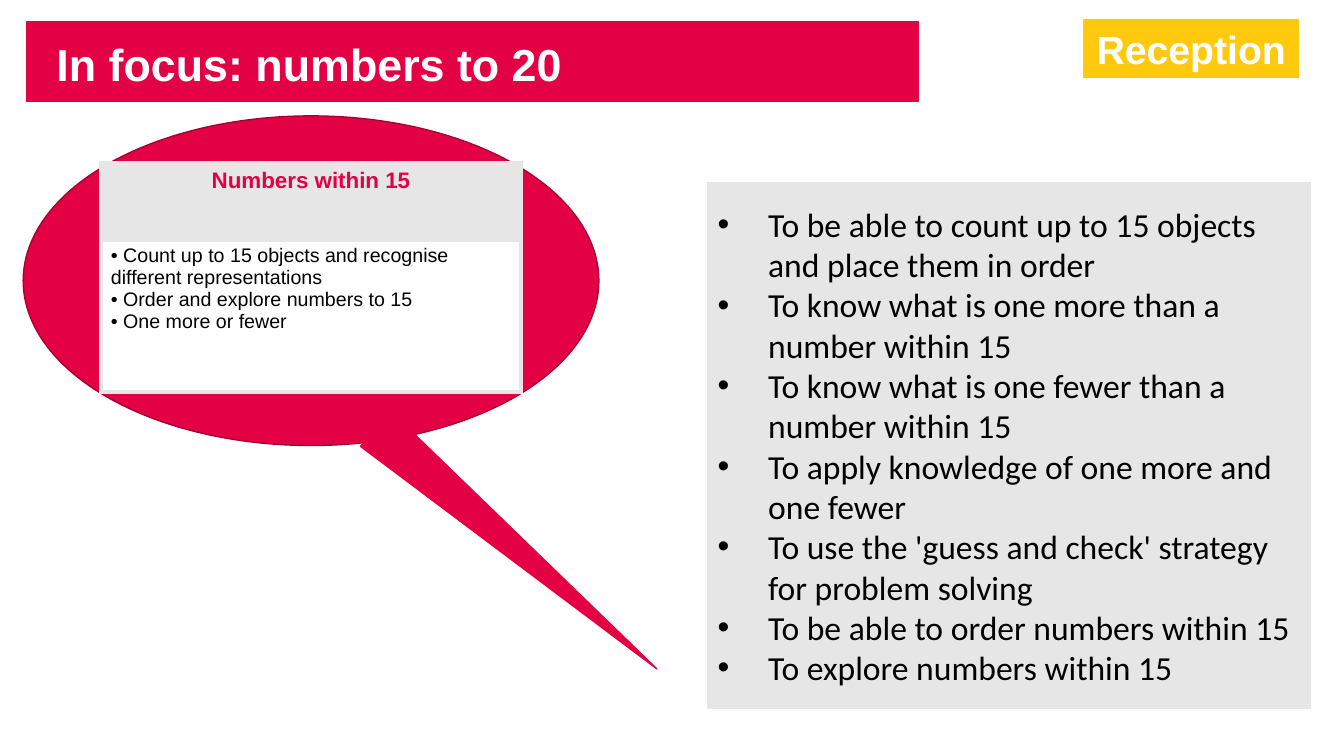
from dataclasses import dataclass

import lxml.etree
import pptx
import pptx.dml.color
import pptx.enum.shapes
import pptx.enum.text
import pptx.oxml
import pptx.oxml.ns
import pptx.util

Inches = pptx.util.Inches
Pt = pptx.util.Pt
RGB = pptx.dml.color.RGBColor
Shape = pptx.enum.shapes.MSO_SHAPE
Align = pptx.enum.text.PP_ALIGN
Anchor = pptx.enum.text.MSO_ANCHOR
AutoSize = pptx.enum.text.MSO_AUTO_SIZE
qn = pptx.oxml.ns.qn


@dataclass(frozen=True)
class Theme:
    red: str = "E40045"
    dark_red: str = "A90033"
    yellow: str = "FFC90D"
    panel: str = "E7E6E6"
    grid: str = "E6E6E6"
    white: str = "FFFFFF"
    black: str = "000000"
    head_font: str = "Arial"
    body_font: str = "Calibri"
    title: int = 32
    badge: int = 28
    goal: int = 24
    table_head: int = 16
    table_body: int = 14


@dataclass(frozen=True)
class Block:
    kind: int
    left: float
    top: float
    width: float
    height: float
    fill: str
    line: str
    rotation: float = 0


THEME = Theme()

BANNER = Block(Shape.RECTANGLE, 0.26, 0.22, 8.85, 0.79, THEME.red, THEME.red)
BUBBLE = Block(Shape.OVAL, 0.23, 1.15, 5.71, 3.27, THEME.red, THEME.dark_red)
PANEL = Block(Shape.RECTANGLE, 7.02, 1.81, 5.98, 5.22, THEME.panel, THEME.panel)
BADGE = Block(Shape.RECTANGLE, 10.75, 0.2, 2.13, 0.57, THEME.yellow, THEME.yellow)
TAIL = Block(Shape.ISOSCELES_TRIANGLE, 4.89, 3.61, 0.46, 3.67, THEME.red, THEME.red, 130.5)

GOALS = [
    "To be able to count up to 15 objects and place them in order",
    "To know what is one more than a number within 15",
    "To know what is one fewer than a number within 15",
    "To apply knowledge of one more and one fewer",
    "To use the 'guess and check' strategy for problem solving",
    "To be able to order numbers within 15",
    "To explore numbers within 15",
]
STEPS = [
    " Count up to 15 objects and recognise different representations",
    " Order and explore numbers to 15",
    " One more or fewer",
]


def add_block(slide, block: Block):
    sp = slide.shapes.add_shape(
        block.kind, Inches(block.left), Inches(block.top), Inches(block.width), Inches(block.height)
    )
    sp.shadow.inherit = False
    sp.fill.solid()
    sp.fill.fore_color.rgb = RGB.from_string(block.fill)
    sp.line.color.rgb = RGB.from_string(block.line)
    sp.line.width = Pt(1)
    sp.rotation = block.rotation
    return sp


def write(tf, lines: list[str], size: int, color: str, font: str,
          bold: bool = False, align=Align.LEFT) -> None:
    tf.text = "\n".join(lines)
    for p in tf.paragraphs:
        p.alignment = align
        p.font.size = Pt(size)
        p.font.name = font
        p.font.bold = bold
        p.font.color.rgb = RGB.from_string(color)


def add_bullets(tf, hang: float) -> None:
    for p in tf.paragraphs:
        props = p._p.get_or_add_pPr()
        props.set("marL", str(Inches(hang)))
        props.set("indent", str(-Inches(hang)))
        font = lxml.etree.Element(qn("a:buFont"), typeface=THEME.head_font)
        mark = lxml.etree.Element(qn("a:buChar"), char="•")
        props.insert(0, font)
        font.addnext(mark)


def format_cell(cell, fill: str) -> None:
    cell.fill.solid()
    cell.fill.fore_color.rgb = RGB.from_string(fill)
    props = cell._tc.get_or_add_tcPr()
    for i, side in enumerate(("a:lnL", "a:lnR", "a:lnT", "a:lnB")):
        ln = lxml.etree.Element(qn(side), w=str(Pt(3)))
        solid = lxml.etree.SubElement(ln, qn("a:solidFill"))
        lxml.etree.SubElement(solid, qn("a:srgbClr"), val=THEME.grid)
        props.insert(i, ln)


def add_title(slide, text: str) -> None:
    sp = slide.shapes.title
    sp.left, sp.top, sp.width, sp.height = Inches(0.46), Inches(0.31), Inches(5.25), Inches(0.64)
    tf = sp.text_frame
    write(tf, [text], THEME.title, THEME.white, THEME.head_font, bold=True)
    tf.vertical_anchor = Anchor.TOP
    tf.word_wrap = False
    tf.auto_size = AutoSize.SHAPE_TO_FIT_TEXT
    slide.shapes._spTree.append(sp._element)


def add_steps_table(slide) -> None:
    heights = (0.76, 1.51)
    frame = slide.shapes.add_table(
        2, 1, Inches(1), Inches(1.62), Inches(4.17), Inches(sum(heights))
    )
    table = frame.table
    for row, height in zip(table.rows, heights):
        row.height = Inches(height)
    head, body = table.cell(0, 0), table.cell(1, 0)
    format_cell(head, THEME.grid)
    format_cell(body, THEME.white)
    write(head.text_frame, ["Numbers within 15"], THEME.table_head, THEME.red,
          THEME.head_font, bold=True, align=Align.CENTER)
    write(body.text_frame, STEPS, THEME.table_body, THEME.black, THEME.head_font)
    add_bullets(body.text_frame, 0)


def main() -> None:
    prs = pptx.Presentation()
    prs.slide_width, prs.slide_height = Inches(13.33), Inches(7.5)
    slide = prs.slides.add_slide(prs.slide_layouts[5])

    add_block(slide, BANNER)
    add_block(slide, BUBBLE)

    tf = add_block(slide, PANEL).text_frame
    write(tf, GOALS, THEME.goal, THEME.black, THEME.body_font)
    add_bullets(tf, 0.5)
    tf.vertical_anchor = Anchor.MIDDLE

    tf = add_block(slide, BADGE).text_frame
    write(tf, ["Reception"], THEME.badge, THEME.white, THEME.head_font,
          bold=True, align=Align.CENTER)
    tf.vertical_anchor = Anchor.TOP
    tf.auto_size = AutoSize.SHAPE_TO_FIT_TEXT

    add_title(slide, "In focus: numbers to 20")
    add_steps_table(slide)
    add_block(slide, TAIL)
    prs.save("out.pptx")


if __name__ == "__main__":
    main()
